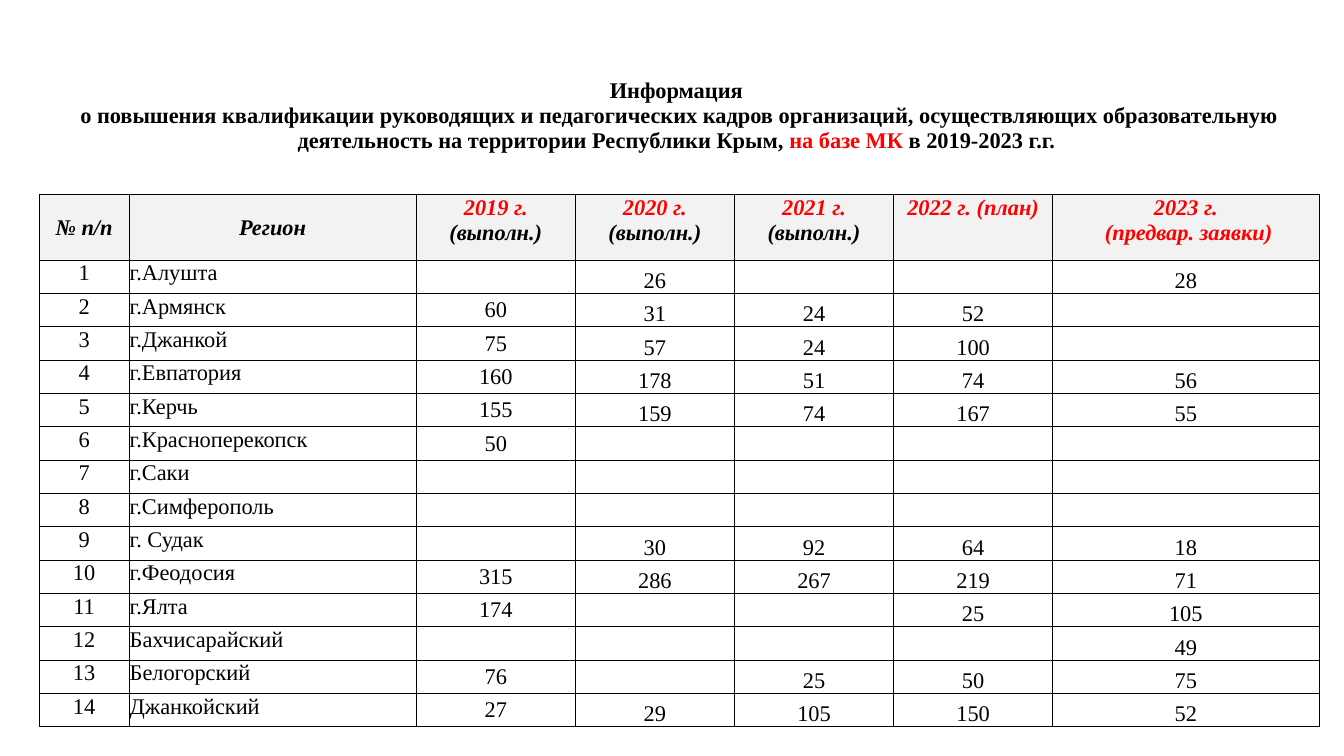
from lxml.etree import SubElement
from pptx import Presentation
from pptx.dml.color import RGBColor as RGB
from pptx.enum.text import MSO_ANCHOR as ANCHOR, PP_ALIGN as ALIGN
from pptx.oxml.ns import qn
from pptx.util import Cm, Pt

COLORS = {"text": "000000", "accent": "FF0000", "header": "F2F2F2", "line": "000000"}
COL_WIDTHS = [2.26, 7.24] + [4.01] * 4 + [6.71]
TITLE_H, HEADER_H, ROW_H = 3.96, 1.65, 0.84
MARGINS = {"margin_left": Cm(0.02), "margin_right": Cm(0.02),
           "margin_top": Cm(0.02), "margin_bottom": 0}
BODY = {"name": "Times New Roman", "size": Pt(16), "bold": False, "italic": False}
BOLD = {**BODY, "bold": True}
HEAD = {**BOLD, "italic": True}

TITLE = [
    ("Информация \nо повышения квалификации руководящих и педагогических кадров "
     "организаций, осуществляющих образовательную деятельность на территории "
     "Республики Крым, ", "text"),
    ("на базе МК", "accent"),
    (" в 2019-2023 г.г. ", "text"),
]
HEADER = [
    [("№ п/п", "text")],
    [("Регион", "text")],
    *[[(f"{year} г.", "accent"), (" (выполн.)", "text")] for year in (2019, 2020, 2021)],
    [("2022 г. (план)", "accent")],
    [("2023 г.\n (предвар. заявки)", "accent")],
]
REGIONS = [
    ("г.Алушта", "", 26, "", "", 28),
    ("г.Армянск", 60, 31, 24, 52, ""),
    ("г.Джанкой", 75, 57, 24, 100, ""),
    ("г.Евпатория", 160, 178, 51, 74, 56),
    ("г.Керчь", 155, 159, 74, 167, 55),
    ("г.Красноперекопск", 50, "", "", "", ""),
    ("г.Саки", "", "", "", "", ""),
    ("г.Симферополь", "", "", "", "", ""),
    ("г. Судак", "", 30, 92, 64, 18),
    ("г.Феодосия", 315, 286, 267, 219, 71),
    ("г.Ялта", 174, "", "", 25, 105),
    ("Бахчисарайский", "", "", "", "", 49),
    ("Белогорский", 76, "", 25, 50, 75),
    ("Джанкойский", 27, 29, 105, 150, 52),
]
BODY_ANCHORS = [ANCHOR.TOP] * 2 + [ANCHOR.MIDDLE] + [ANCHOR.BOTTOM] * 4


def set_attrs(target, values):
    for name, value in values.items():
        setattr(target, name, value)


def set_borders(cell, visible):
    """Draw the sides named in visible (of "LRTB") and hide the others."""
    tcPr = cell._tc.get_or_add_tcPr()
    for side in "LRTB":
        ln = SubElement(tcPr, qn(f"a:ln{side}"), w=str(Pt(0.5)))
        if side in visible:
            fill = SubElement(ln, qn("a:solidFill"))
            SubElement(fill, qn("a:srgbClr"), val=COLORS["line"])
        else:
            SubElement(ln, qn("a:noFill"))


def fill_cell(cell, runs, font, anchor, align=ALIGN.CENTER, fill=None, borders="LRTB"):
    set_attrs(cell, {**MARGINS, "vertical_anchor": anchor})
    set_borders(cell, borders)
    if fill:
        cell.fill.solid()
        cell.fill.fore_color.rgb = RGB.from_string(COLORS[fill])
    else:
        cell.fill.background()
    p = cell.text_frame.paragraphs[0]
    p.alignment = align
    for text, color in runs:
        for i, line in enumerate(text.split("\n")):
            if i:
                p.add_line_break()
            r = p.add_run()
            r.text = line
            set_attrs(r.font, font)
            r.font.color.rgb = RGB.from_string(COLORS[color])


def add_title_row(table):
    cells = list(table.rows[0].cells)
    cells[0].merge(cells[-1])
    for i, cell in enumerate(cells):
        fill_cell(cell, [] if i else TITLE, BOLD, ANCHOR.MIDDLE, borders="B")


def add_header_row(table):
    for i, (cell, runs) in enumerate(zip(table.rows[1].cells, HEADER)):
        anchor = ANCHOR.MIDDLE if i < 2 else ANCHOR.TOP
        fill_cell(cell, runs, HEAD, anchor, fill="header")


def add_region_rows(table):
    for number, region in enumerate(REGIONS, 1):
        cells = table.rows[number + 1].cells
        for i, (cell, value) in enumerate(zip(cells, (number, *region))):
            align = ALIGN.LEFT if i == 1 else ALIGN.CENTER
            fill_cell(cell, [(str(value), "text")], BODY, BODY_ANCHORS[i], align)


def add_training_table(s, left, top):
    heights = [TITLE_H, HEADER_H] + [ROW_H] * len(REGIONS)
    table = s.shapes.add_table(len(heights), len(COL_WIDTHS), Cm(left), Cm(top),
                               Cm(sum(COL_WIDTHS)), Cm(sum(heights))).table
    set_attrs(table, {"first_row": False, "horz_banding": False})
    for column, width in zip(table.columns, COL_WIDTHS):
        column.width = Cm(width)
    for row, height in zip(table.rows, heights):
        row.height = Cm(height)
    add_title_row(table)
    add_header_row(table)
    add_region_rows(table)


def main():
    prs = Presentation()
    set_attrs(prs, {"slide_width": Cm(33.87), "slide_height": Cm(19.05)})
    s = prs.slides.add_slide(prs.slide_layouts[6])
    add_training_table(s, 0.99, 0.94)
    prs.save("out.pptx")


if __name__ == "__main__":
    main()
